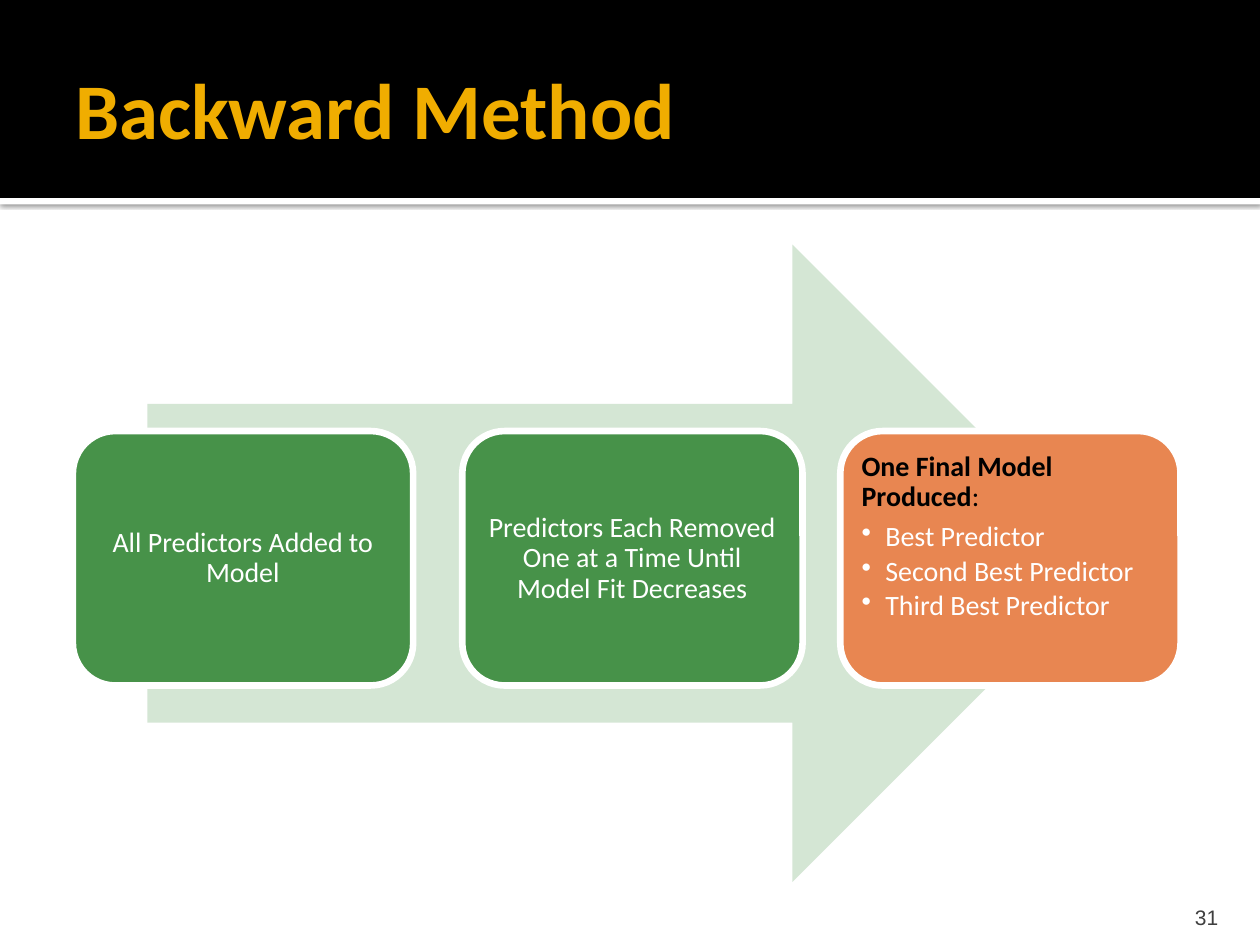
"""Build the Backward Method slide."""
from lxml.etree import SubElement
from pptx import Presentation
from pptx.dml.color import RGBColor
from pptx.enum.shapes import MSO_SHAPE
from pptx.enum.text import MSO_ANCHOR, PP_ALIGN
from pptx.oxml import parse_xml
from pptx.oxml.ns import qn
from pptx.util import Cm, Pt

rgb = RGBColor.from_string


def draw(kind, left, top, width, height, fill, line=None):
    shape = slide.shapes.add_shape(kind, Cm(left), Cm(top), Cm(width), Cm(height))
    shape.shadow.inherit = False
    shape.fill.solid()
    shape.fill.fore_color.rgb = rgb(fill)
    if line:
        shape.line.color.rgb = rgb(line)
        shape.line.width = Pt(3.78)
    else:
        shape.line.fill.background()
    return shape


def write(left, top, width, height, lines, size, color, face="Calibri",
          align=PP_ALIGN.LEFT, anchor=MSO_ANCHOR.MIDDLE, pads=(0.18,) * 4):
    frame = slide.shapes.add_textbox(Cm(left), Cm(top), Cm(width), Cm(height)).text_frame
    frame.word_wrap = True
    frame.vertical_anchor = anchor
    frame.margin_left, frame.margin_top, frame.margin_right, frame.margin_bottom = map(Cm, pads)
    for i, line in enumerate(lines):
        para = frame.add_paragraph() if i else frame.paragraphs[0]
        para.add_run().text = line
        para.alignment = align
        para.font.size = Pt(size)
        para.font.name = face
        para.font.color.rgb = rgb(color)
    return frame.paragraphs


deck = Presentation()
deck.slide_width, deck.slide_height = Cm(25.4), Cm(19.05)
slide = deck.slides.add_slide(deck.slide_layouts[6])

strip = draw(MSO_SHAPE.RECTANGLE, 0, 3.99, 25.4, 0.13, "FFFFFF")
glow = strip._element.spPr.find(qn("a:effectLst"))
glow.append(parse_xml(
    '<a:outerShdw xmlns:a="http://schemas.openxmlformats.org/drawingml/2006/main" '
    'blurRad="31750" dist="10160" dir="5400000" algn="tl" rotWithShape="0">'
    '<a:srgbClr val="000000"><a:alpha val="60000"/></a:srgbClr></a:outerShdw>'))
draw(MSO_SHAPE.RECTANGLE, 0, 0, 25.4, 3.99, "000000")
title = write(1.27, 0.43, 22.86, 3.48, ["Backward Method"], 45, "F0AD00",
              pads=(0.25, 0.13, 0.13, 0.13))
title[0].font.bold = True

draw(MSO_SHAPE.RIGHT_ARROW, 2.97, 4.93, 19.43, 12.85, "D4E6D4")
steps = [
    (1.47, "479249", ["All Predictors Added to Model"]),
    (9.32, "479249", ["Predictors Each Removed One at a Time Until Model Fit Decreases"]),
    (16.94, "E88651", ["One Final Model Produced", "Best Predictor",
                       "Second Best Predictor", "Third Best Predictor"]),
]
for left, fill, lines in steps:
    draw(MSO_SHAPE.ROUNDED_RECTANGLE, left, 8.69, 6.86, 5.13, fill, "FFFFFF")
    many = len(lines) > 1
    paras = write(left + 0.25, 8.94, 6.35, 4.65, lines, 16, "FFFFFF",
                  align=PP_ALIGN.LEFT if many else PP_ALIGN.CENTER,
                  anchor=MSO_ANCHOR.TOP if many else MSO_ANCHOR.MIDDLE)
    for i, para in enumerate(paras):
        para.line_spacing = 0.9
        para.space_after = Pt(2.4 if i else 5.6)

head, *items = paras
head.font.color.rgb = rgb("000000")
head.runs[0].font.bold = True
head.add_run().text = ":"
for item in items:
    item.level = 1
    props = item._p.get_or_add_pPr()
    props.set("marL", str(Cm(0.48)))
    props.set("indent", str(-Cm(0.48)))
    mark = SubElement(props, qn("a:buChar"))
    mark.set("char", "•")
    props.find(qn("a:defRPr")).addprevious(mark)

write(22.78, 17.98, 2.03, 0.76, ["31"], 12, "3F3F3F", "Arial", PP_ALIGN.RIGHT,
      MSO_ANCHOR.BOTTOM, (0.25, 0.13, 0.25, 0))

deck.save("out.pptx")
